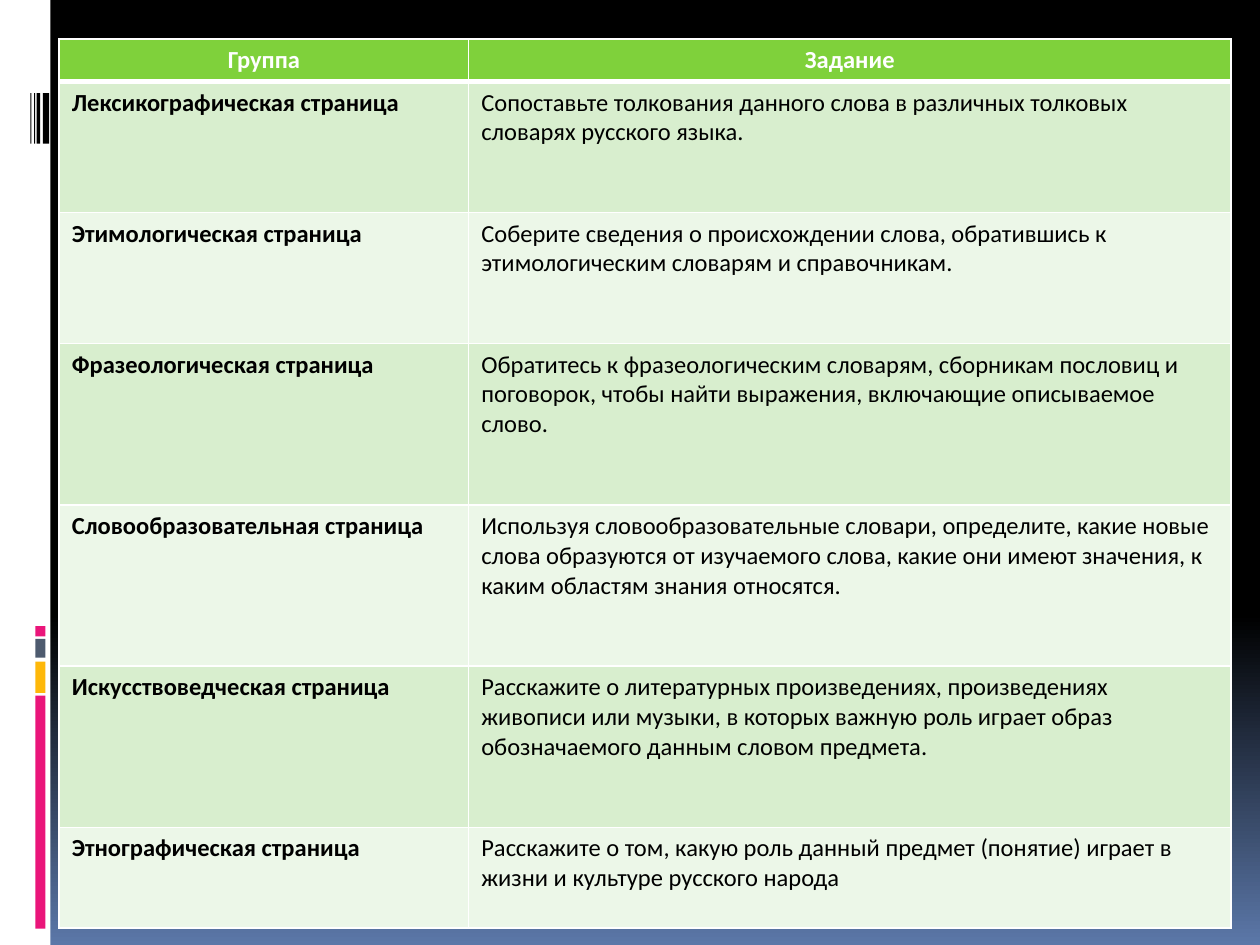
from lxml import etree
from pptx import Presentation
from pptx.dml.color import RGBColor
from pptx.enum.shapes import MSO_SHAPE as Shape
from pptx.enum.text import PP_ALIGN as Align
from pptx.oxml.ns import qn
from pptx.util import Inches, Pt

WHITE = RGBColor(0xFF, 0xFF, 0xFF)
BLACK = RGBColor(0, 0, 0)
BLUE = RGBColor(0x5B, 0x77, 0xA8)
PINK = RGBColor(0xEA, 0x15, 0x7A)
AMBER = RGBColor(0xFE, 0xB8, 0x0A)
SLATE = RGBColor(0x4E, 0x5B, 0x6F)
GREEN = RGBColor(0x7F, 0xD1, 0x3B)
BAND_DARK = RGBColor(0xD8, 0xEE, 0xCE)
BAND_LIGHT = RGBColor(0xEC, 0xF7, 0xE8)

ROWS = [
    ("Группа", "Задание", 0.33),
    ("Лексикографическая страница",
     "Сопоставьте толкования данного слова в различных толковых словарях "
     "русского языка.", 1.04),
    ("Этимологическая страница",
     "Соберите сведения о происхождении слова, обратившись к этимологическим "
     "словарям и справочникам.", 1.04),
    ("Фразеологическая страница",
     "Обратитесь к фразеологическим словарям, сборникам пословиц и поговорок, "
     "чтобы найти выражения, включающие описываемое слово.", 1.28),
    ("Словообразовательная страница",
     "Используя словообразовательные словари, определите, какие новые слова "
     "образуются от изучаемого слова, какие они имеют значения, к каким "
     "областям знания относятся.", 1.28),
    ("Искусствоведческая страница",
     "Расскажите о литературных произведениях, произведениях живописи или "
     "музыки, в которых важную роль играет образ обозначаемого данным словом "
     "предмета.", 1.28),
    ("Этнографическая страница",
     "Расскажите о том, какую роль данный предмет (понятие) играет в жизни и "
     "культуре русского народа", 0.8),
]


def paint_background(slide):
    fill = slide.background.fill
    fill.gradient()
    fill.gradient_angle = 270
    for stop, pos, color in zip(fill.gradient_stops, (0.65, 1), (BLACK, BLUE)):
        stop.position = pos
        stop.color.rgb = color


def add_bar(slide, x, y, w, h, color):
    sp = slide.shapes.add_shape(Shape.RECTANGLE, x, y, w, h)
    sp.shadow.inherit = False
    sp.fill.solid()
    sp.fill.fore_color.rgb = color
    sp.line.fill.background()


def add_sidebar(slide, x, y, w, h):
    add_bar(slide, x, y, w, h, WHITE)
    # Coloured blocks
    for top, height, color in ((5.52, 1.85, PINK), (5.25, 0.25, AMBER),
                               (5.07, 0.15, SLATE), (4.97, 0.08, PINK)):
        add_bar(slide, x + Inches(0.28), y + Inches(top),
                Inches(0.08), Inches(height), color)
    # Black stripes
    for left, width in ((0.34, 0.05), (0.29, 0.03), (0.27, 0.01), (0.24, 0.01)):
        add_bar(slide, x + Inches(left), y + Inches(0.74),
                Inches(width), Inches(0.4), BLACK)


def set_borders(cell, bottom, top):
    tcPr = cell._tc.get_or_add_tcPr()
    sides = (("a:lnL", 1), ("a:lnR", 1), ("a:lnT", top), ("a:lnB", bottom))
    for i, (tag, width) in enumerate(sides):
        ln = etree.Element(qn(tag), w=str(Pt(width)))
        solid = etree.SubElement(ln, qn("a:solidFill"))
        etree.SubElement(solid, qn("a:srgbClr"), val=str(WHITE))
        tcPr.insert(i, ln)


def add_task_table(slide, x, y, w, h):
    table = slide.shapes.add_table(len(ROWS), 2, x, y, w, h).table
    table.columns[0].width = Inches(3.25)
    table.columns[1].width = w - Inches(3.25)
    for i, (group, task, height) in enumerate(ROWS):
        table.rows[i].height = Inches(height)
        header = i == 0
        band = GREEN if header else BAND_DARK if i % 2 else BAND_LIGHT
        for j, text in enumerate((group, task)):
            cell = table.cell(i, j)
            cell.fill.solid()
            cell.fill.fore_color.rgb = band
            set_borders(cell, bottom=3 if header else 1, top=3 if i == 1 else 1)
            p = cell.text_frame.paragraphs[0]
            p.text = text
            p.alignment = Align.CENTER if header else Align.LEFT
            font = p.runs[0].font
            font.name = "Calibri"
            font.size = Pt(14)
            font.bold = header or j == 0
            font.color.rgb = WHITE if header else BLACK


def main():
    prs = Presentation()
    prs.slide_width, prs.slide_height = Inches(10), Inches(7.5)
    slide = prs.slides.add_slide(prs.slide_layouts[6])
    paint_background(slide)
    add_sidebar(slide, Inches(0), Inches(0), Inches(0.4), prs.slide_height)
    add_task_table(slide, Inches(0.47), Inches(0.31), Inches(9.3), Inches(7.04))
    prs.save("out.pptx")


if __name__ == "__main__":
    main()
